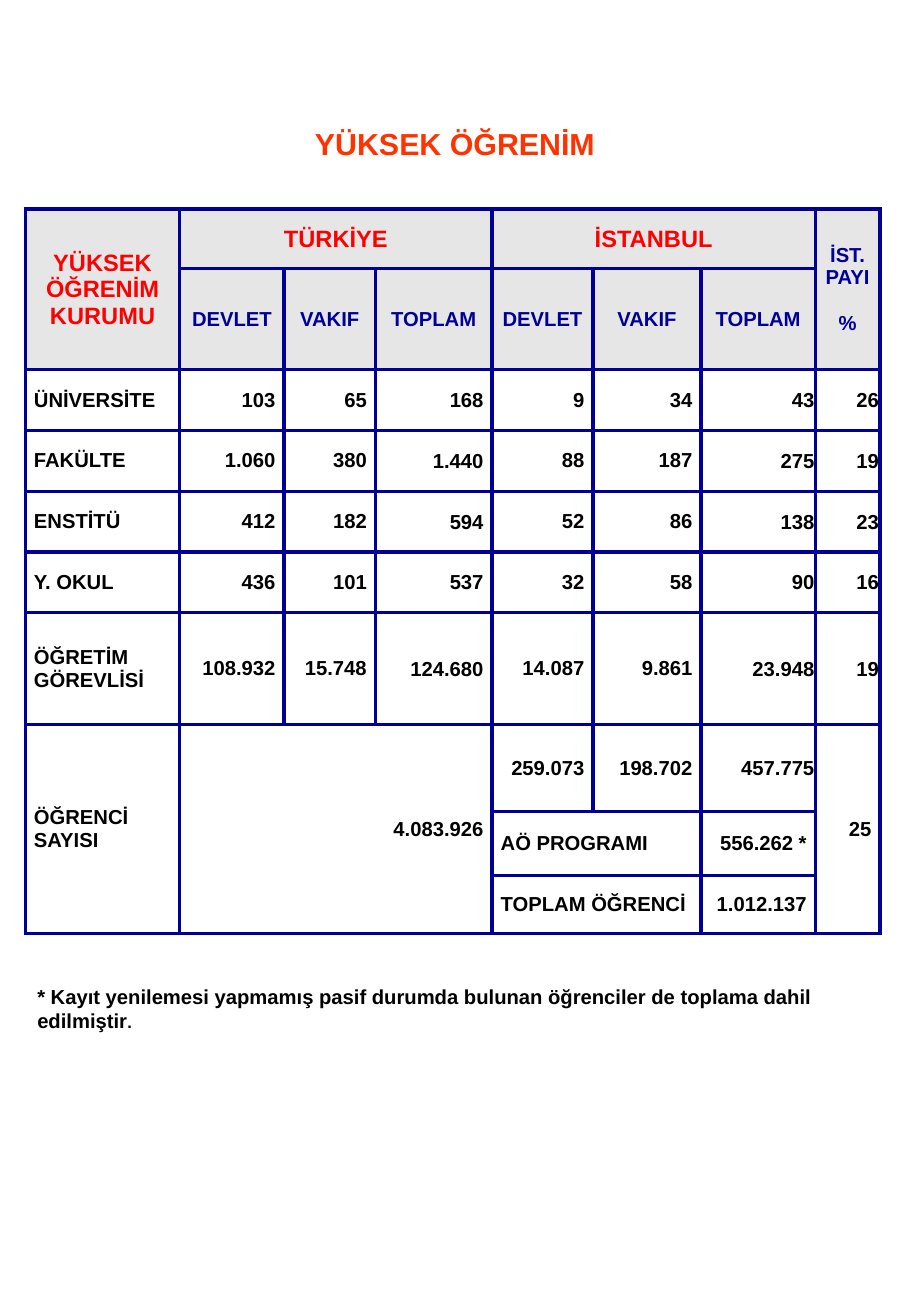
from lxml.etree import SubElement as Sub
from pptx import Presentation
from pptx.dml.color import RGBColor as Rgb
from pptx.enum.text import MSO_ANCHOR as Anchor, MSO_AUTO_SIZE as Auto, PP_ALIGN as Align
from pptx.oxml.ns import qn
from pptx.util import Cm, Pt

HUES = {"title": "FF3300", "head": "FF0000", "line": "000099",
        "text": "000000", "gray": "E7E6E6", "white": "FFFFFF"}
COLS = [3.23, 2.18, 1.91, 2.44, 2.11, 2.26, 2.39, 1.35]
ROWS = [1.25, 2.08] + [1.27] * 4 + [2.34, 1.82, 1.33, 1.22]
KINDS = ["DEVLET", "VAKIF", "TOPLAM"]
DATA = [
    ["YÜKSEK ÖĞRENİM KURUMU", "TÜRKİYE", "", "", "İSTANBUL", "", "", "İST. PAYI\n%"],
    [""] + KINDS * 2 + [""],
    ["ÜNİVERSİTE", "103", "65", "168", "9", "34", "43", "26"],
    ["FAKÜLTE", "1.060", "380", "1.440", "88", "187", "275", "19"],
    ["ENSTİTÜ", "412", "182", "594", "52", "86", "138", "23"],
    ["Y. OKUL", "436", "101", "537", "32", "58", "90", "16"],
    ["ÖĞRETİM GÖREVLİSİ", "108.932", "15.748", "124.680", "14.087", "9.861", "23.948", "19"],
    ["ÖĞRENCİ SAYISI", "4.083.926", "", "", "259.073", "198.702", "457.775", "25"],
    ["", "", "", "", "AÖ PROGRAMI", "", "556.262 *", ""],
    ["", "", "", "", "TOPLAM ÖĞRENCİ", "", "1.012.137", ""],
]
SPANS = [(0, 0, 1, 0), (0, 1, 0, 3), (0, 4, 0, 6), (0, 7, 1, 7), (7, 0, 9, 0),
         (7, 1, 9, 3), (7, 7, 9, 7), (8, 4, 8, 5), (9, 4, 9, 5)]


class Page:
    """Holds the slide and its text and table style."""

    def __init__(self, deck, font="Arial"):
        self.slide = deck.slides.add_slide(deck.slide_layouts[5])
        self.font = font

    def style(self, para, size, hue, align=Align.LEFT):
        para.alignment = align
        font = para.font
        font.name, font.size, font.bold = self.font, Pt(size), True
        font.color.rgb = Rgb.from_string(HUES[hue])

    def title(self, text, left, top, width, height):
        box = self.slide.shapes.title
        box.left, box.top, box.width, box.height = map(Cm, (left, top, width, height))
        frame = box.text_frame
        frame.text = text
        frame.auto_size, frame.vertical_anchor = Auto.NONE, Anchor.MIDDLE
        self.style(frame.paragraphs[0], 18, "title", Align.CENTER)

    def note(self, text, end, left, top, width, height):
        box = self.slide.shapes.add_textbox(*map(Cm, (left, top, width, height)))
        box.text_frame.word_wrap = True
        para = box.text_frame.paragraphs[0]
        para.add_run().text = text
        self.style(para, 12, "text")
        dot = para.add_run()
        dot.text, dot.font.size = end, Pt(9.8)

    def edge(self, cell):
        props = cell._tc.get_or_add_tcPr()
        for spot, side in enumerate(("lnL", "lnR", "lnT", "lnB")):
            line = Sub(props, qn("a:" + side), w=str(Pt(2.25)))
            Sub(Sub(line, qn("a:solidFill")), qn("a:srgbClr"), val=HUES["line"])
            props.insert(spot, line)

    def cell(self, cell, text, row, col):
        head = row < 2
        tight = 2 <= row <= 7 and col in (3, 6, 7) and not cell.is_merge_origin
        cell.fill.solid()
        cell.fill.fore_color.rgb = Rgb.from_string(HUES["gray" if head else "white"])
        self.edge(cell)
        cell.vertical_anchor = Anchor.MIDDLE
        cell.margin_left = Cm(0.02 if tight else 0.18)
        cell.margin_right = Cm(0.02 if tight and col > 3 else 0.18)
        cell.margin_top = Cm(0.02 if tight else 0.1)
        cell.margin_bottom = Cm(0 if tight else 0.1)
        cell.text = text
        big = row == 0 and col < 7
        hue = "head" if big else "line" if head else "text"
        label = col == 0 or row > 7 and col == 4
        align = Align.CENTER if head else Align.LEFT if label else Align.RIGHT
        for spot, para in enumerate(cell.text_frame.paragraphs):
            self.style(para, 14 if big else 12, hue, align)
            if spot:
                para.space_before = Pt(13.8)

    def table(self, left, top):
        size = map(Cm, (left, top, sum(COLS), sum(ROWS)))
        grid = self.slide.shapes.add_table(len(ROWS), len(COLS), *size).table
        grid.first_row = grid.horz_banding = False
        for col, width in zip(grid.columns, COLS):
            col.width = Cm(width)
        for row, height in zip(grid.rows, ROWS):
            row.height = Cm(height)
        for top_row, first, low_row, last in SPANS:
            grid.cell(top_row, first).merge(grid.cell(low_row, last))
        for row, texts in enumerate(DATA):
            for col, text in enumerate(texts):
                self.cell(grid.cell(row, col), text, row, col)


def main():
    deck = Presentation()
    deck.slide_width, deck.slide_height = Cm(19.05), Cm(27.51)
    page = Page(deck)
    page.title("YÜKSEK ÖĞRENİM", 4.27, 2.18, 10.49, 1.65)
    page.table(0.53, 4.37)
    page.note("* Kayıt yenilemesi yapmamış pasif durumda bulunan öğrenciler "
              "de toplama dahil edilmiştir", ".", 0.53, 20.45, 17.4, 1.3)
    deck.save("out.pptx")


if __name__ == "__main__":
    main()
